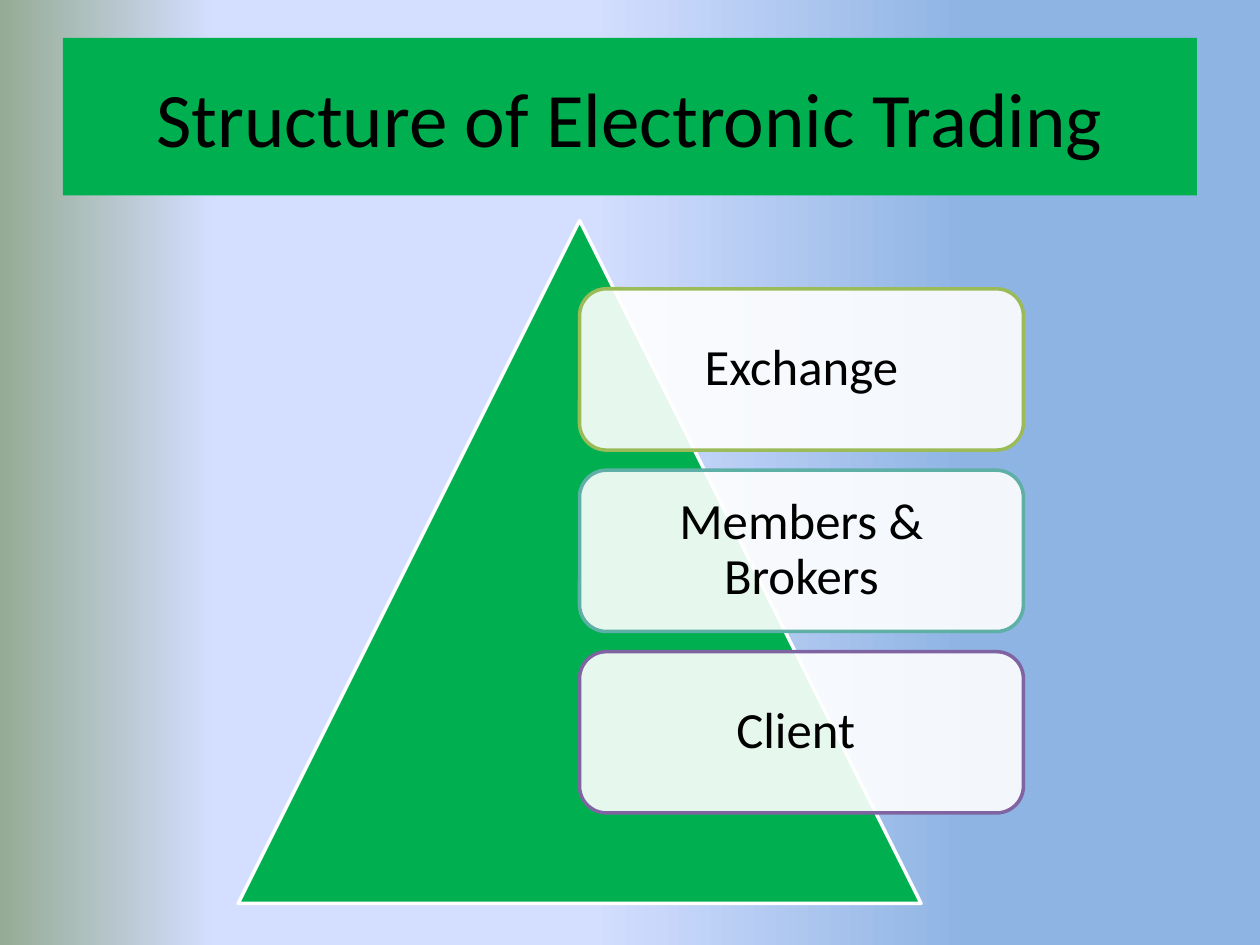
from dataclasses import dataclass

from lxml.etree import SubElement
from pptx import Presentation
from pptx.dml.color import RGBColor
from pptx.enum.shapes import MSO_SHAPE
from pptx.enum.text import MSO_ANCHOR, PP_ALIGN
from pptx.oxml.ns import qn
from pptx.util import Inches, Pt


@dataclass(frozen=True)
class Theme:
    font: str = "Calibri"
    ink: str = "000000"
    green: str = "00B050"
    white: str = "FFFFFF"
    edges: tuple = ("9BBB59", "5EAFA6", "8064A2")
    stops: tuple = ((23, "8EB4E3"), (53, "D4DEFF"), (83, "D4DEFF"), (100, "96AB94"))
    title: int = 44
    label: int = 29
    line: int = 2
    alpha: int = 90


THEME = Theme()


def style(item, form):
    for name, value in form.items():
        setattr(item, name, value)


def add_box(shapes, kind, box, fill, edge=None):
    shape = shapes.add_shape(kind, *map(Inches, box))
    shape.shadow.inherit = False
    shape.fill.solid()
    shape.fill.fore_color.rgb = RGBColor.from_string(fill)
    if edge:
        shape.line.color.rgb = RGBColor.from_string(edge)
        shape.line.width = Pt(THEME.line)
    else:
        shape.line.fill.background()
    return shape


def write(shape, text, size, inset, space=1.0):
    frame = shape.text_frame
    sides = ("left", "top", "right", "bottom")
    style(frame, {"word_wrap": True, "vertical_anchor": MSO_ANCHOR.MIDDLE}
          | {f"margin_{side}": Inches(inset) for side in sides})
    para = frame.paragraphs[0]
    style(para, {"alignment": PP_ALIGN.CENTER, "line_spacing": space})
    run = para.add_run()
    run.text = text
    style(run.font, {"name": THEME.font, "size": Pt(size)})
    run.font.color.rgb = RGBColor.from_string(THEME.ink)


def add_back(slide):
    fill = slide.background.fill
    fill.gradient()
    fill.gradient_angle = 180
    # Four stops need XML
    stops = next(slide.element.iter(qn("a:gsLst")))
    for stop in list(stops):
        stops.remove(stop)
    for place, color in THEME.stops:
        stop = SubElement(stops, qn("a:gs"), pos=str(place * 1000))
        SubElement(stop, qn("a:srgbClr"), val=color)


def add_title(slide, box, text):
    shape = add_box(slide.shapes, MSO_SHAPE.RECTANGLE, box, THEME.green)
    write(shape, text, THEME.title, 0.1)


def add_levels(slide, box, labels):
    left, top, width, height = box
    shapes = slide.shapes.add_group_shape().shapes

    # Pyramid
    add_box(shapes, MSO_SHAPE.ISOSCELES_TRIANGLE, box, THEME.green, THEME.white)

    # Cards start on the centre line of the pyramid
    wide, high = 0.65 * width, 1.28
    step = high * 1.125
    for i, (label, edge) in enumerate(zip(labels, THEME.edges)):
        place = (left + width / 2, top + height / 10 + i * step, wide, high)
        card = add_box(shapes, MSO_SHAPE.ROUNDED_RECTANGLE, place, THEME.white, edge)
        color = card.fill._xPr.find(qn("a:solidFill"))[0]
        SubElement(color, qn("a:alpha"), val=str(THEME.alpha * 1000))
        write(card, label, THEME.label, 0.12, 0.9)


def main():
    deck = Presentation()
    style(deck, {"slide_width": Inches(10), "slide_height": Inches(7.5)})
    slide = deck.slides.add_slide(deck.slide_layouts[6])
    add_back(slide)
    add_title(slide, (0.5, 0.3, 9, 1.25), "Structure of Electronic Trading")
    add_levels(slide, (1.89, 1.75, 5.42, 5.42),
               ("Exchange", "Members & Brokers", "Client "))
    deck.save("out.pptx")


if __name__ == "__main__":
    main()
